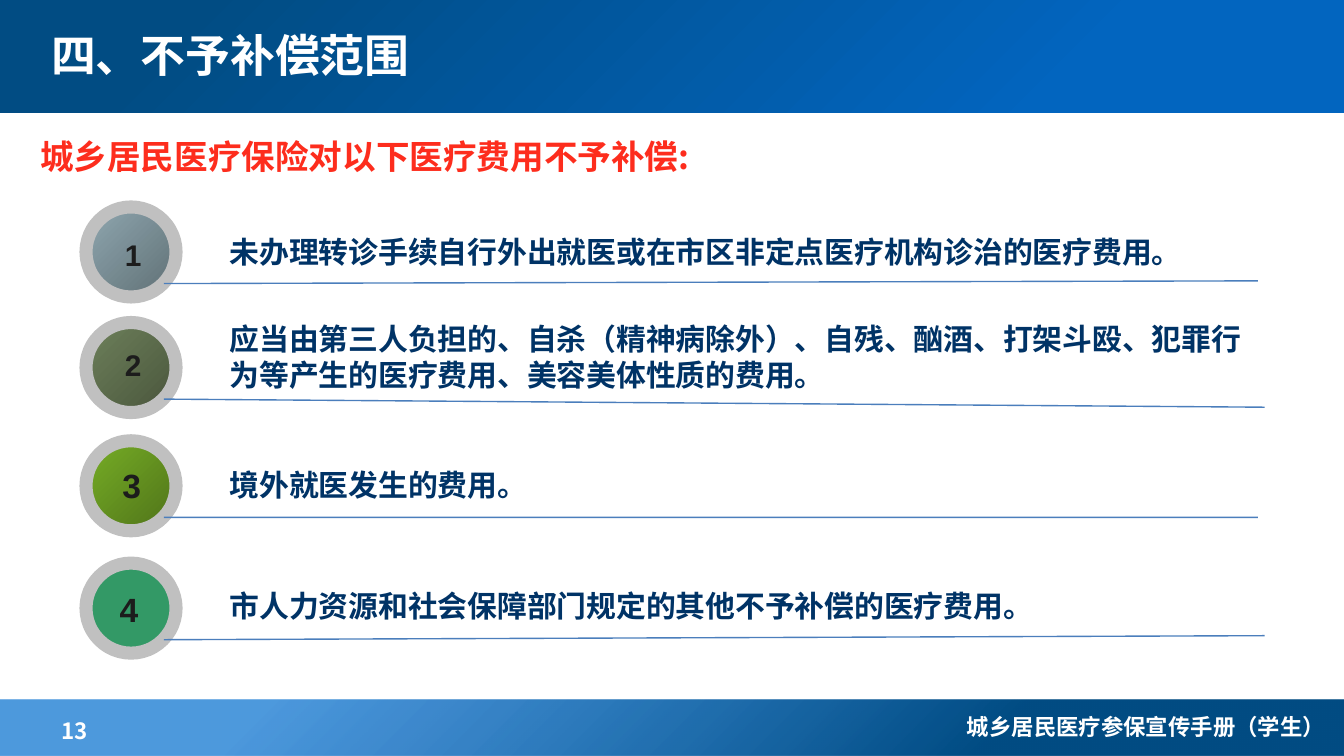
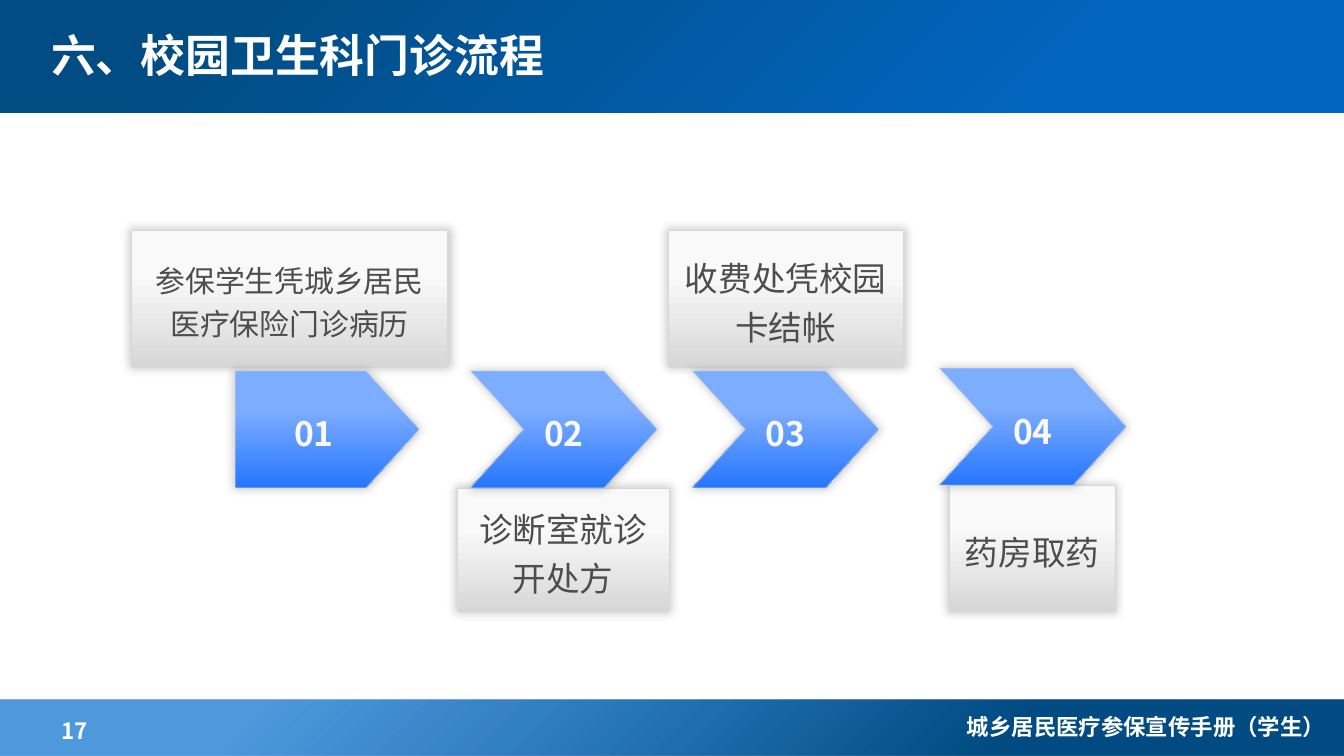
from lxml import etree
from pptx import Presentation
from pptx import util as u
from pptx.dml.color import RGBColor
from pptx.enum import shapes, text
from pptx.oxml.ns import qn

# Content
FOOTER = "城乡居民医疗参保宣传手册（学生）"
EXCLUSIONS_TITLE, EXCLUSIONS_PAGE = "四、不予补偿范围", "13"
LEAD = "城乡居民医疗保险对以下医疗费用不予补偿:"
# text, circle top, circle gradient, number centre (x, y), number size,
# text top, text width and height, rule end (x, y)
EXCLUSIONS = [
    ("未办理转诊手续自行外出就医或在市区非定点医疗机构诊治的医疗费用。",
     1.54, ("90A8B0", "5F6F75"), (0.99, 1.9), 16, 1.69, (7.75, 0.37), (9.36, 2.09)),
    ("应当由第三人负担的、自杀（精神病除外）、自残、酗酒、打架斗殴、犯罪行为等产生的医疗费用、美容美体性质的费用。",
     2.4, ("6E815B", "49553C"), (0.99, 2.72), 16, 2.34, (7.75, 0.64), (9.41, 3.03)),
    ("境外就医发生的费用。",
     3.28, ("77AE26", "4F7319"), (0.98, 3.6), 18, 3.42, (4.25, 0.37), (9.36, 3.85)),
    ("市人力资源和社会保障部门规定的其他不予补偿的医疗费用。",
     4.19, ("339966",), (0.96, 4.52), 18, 4.32, (7.75, 0.37), (9.41, 4.73)),
]
CLINIC_TITLE, CLINIC_PAGE = "六、校园卫生科门诊流程", "17"
# label, size, label box, arrow left, top and width
STEPS = [
    ("参保学生凭城乡居民医疗保险门诊病历", 16, (0.98, 1.71, 2.35, 1.02), (1.75, 2.76, 1.37)),
    ("诊断室就诊开处方", 18, (3.4, 3.63, 1.58, 0.92), (3.5, 2.76, 1.39)),
    ("收费处凭校园卡结帐", 18, (4.97, 1.71, 1.75, 1.02), (5.15, 2.76, 1.39)),
    ("药房取药", 18, (7.06, 3.61, 1.24, 0.94), (6.99, 2.74, 1.39)),
]

# Shared style
WIDTH = 10
HEIGHT = WIDTH * 9 / 16
SANS = "Noto Sans CJK SC"
WHITE, NAVY, RED, INK, GREY = "FFFFFF", "003366", "FD2D1D", "1C1C1C", "4D4D4D"
RING, RULE, EDGE = "C0C0C0", "4B7EBC", "D7D7D7"
CARD_STOPS = [(33, "F9F9F9"), (100, "D7D7D7")]
ARROW_STOPS = [(33, "7DADFF"), (100, "2676FF")]
TITLE_STOPS = [(21, "0265BF"), (86, "014C83")]
FOOTER_STOPS = [(26, "014C83"), (80, "026DCE", 70)]
CIRCLE, ARROW_HEIGHT, FOOTER_HEIGHT = 0.67, 0.87, 0.42
RULE_LEFT, RULE_DROP, TEXT_LEFT = 1.22, 0.57, 1.61
PRESET = shapes.MSO_SHAPE


def rgb(value):
    return RGBColor.from_string(value)


def inches(lengths):
    return [u.Inches(length) for length in lengths]


def add_xml(parent, tag, **attributes):
    child = etree.SubElement(parent, qn(tag))
    for name, value in attributes.items():
        child.set(name, str(value))
    return child


def write(shape, words, size, color, bold=True, font=SANS, align="LEFT",
          anchor="TOP", wrap=True, spacing=None):
    frame = shape.text_frame
    frame.word_wrap = wrap
    frame.auto_size = text.MSO_AUTO_SIZE.NONE
    frame.vertical_anchor = getattr(text.MSO_ANCHOR, anchor)
    para = frame.paragraphs[0]
    para.text = words
    para.alignment = getattr(text.PP_ALIGN, align)
    if spacing:
        para.line_spacing = spacing
    para.font.name, para.font.size, para.font.bold = font, u.Pt(size), bold
    para.font.color.rgb = rgb(color)
    defaults = para._p.pPr.find(qn("a:defRPr"))
    add_xml(defaults, "a:ea", typeface=SANS)


def add_text(page, area, words, size, color, **style):
    box = page.shapes.add_textbox(*inches(area))
    write(box, words, size, color, **style)
    return box


def fill_gradient(shape, stops, angle=None):
    """Linear at the angle, or circular from the lower right corner."""
    shape.fill.gradient()
    gradient = shape._element.spPr.find(qn("a:gradFill"))
    for child in list(gradient):
        gradient.remove(child)
    stop_list = add_xml(gradient, "a:gsLst")
    for position, color, *alpha in stops:
        stop = add_xml(stop_list, "a:gs", pos=position * 1000)
        tint = add_xml(stop, "a:srgbClr", val=color)
        if alpha:
            add_xml(tint, "a:alpha", val=alpha[0] * 1000)
    if angle is None:
        route = add_xml(gradient, "a:path", path="circle")
        add_xml(route, "a:fillToRect", l=100000, t=100000)
    else:
        add_xml(gradient, "a:lin", ang=angle * 60000, scaled=0)


def add_filled(page, preset, area, stops, angle=None, line=None, line_width=0):
    shape = page.shapes.add_shape(preset, *inches(area))
    shape.shadow.inherit = False
    if len(stops) == 1:
        shape.fill.solid()
        shape.fill.fore_color.rgb = rgb(stops[0][1])
    else:
        fill_gradient(shape, stops, angle)
    if line:
        shape.line.color.rgb = rgb(line)
        shape.line.width = u.Pt(line_width)
    else:
        shape.line.fill.background()
    return shape


def add_raised(page, preset, area, stops):
    """Flow part with a thin edge and a soft shadow all round."""
    shape = add_filled(page, preset, area, stops, 90, EDGE, 0.25)
    effects = shape._element.spPr.find(qn("a:effectLst"))
    shadow = add_xml(effects, "a:outerShdw", blurRad=u.Pt(5), dist=0, dir=0,
                     sx=102000, sy=102000, algn="ctr", rotWithShape=0)
    add_xml(add_xml(shadow, "a:srgbClr", val="000000"), "a:alpha", val=20000)
    return shape


def add_rule(page, start, end):
    rule = page.shapes.add_connector(shapes.MSO_CONNECTOR.STRAIGHT, *inches(start + end))
    rule.line.color.rgb = rgb(RULE)
    rule.line.width = u.Pt(0.75)
    add_xml(rule._element.spPr, "a:effectLst")


def furnish_layout(layout, page):
    """Build the bands and footer on a page, then move them to its layout."""
    footer_area = (0, HEIGHT - FOOTER_HEIGHT, WIDTH, FOOTER_HEIGHT)
    parts = [
        add_filled(page, PRESET.RECTANGLE, footer_area, FOOTER_STOPS),
        add_filled(page, PRESET.RECTANGLE, (0, -0.03, 10.03, 0.87), TITLE_STOPS),
        add_text(page, (6.89, 5.26, 3.07, 0.26), FOOTER, 12, WHITE, align="RIGHT"),
    ]
    tree = layout.shapes._spTree
    for index, part in enumerate(parts):
        part._element.nvSpPr.cNvPr.id = 100 + index
        tree.insert(2 + index, part._element)


def head_page(page, title, number):
    box = page.shapes.title
    box.left, box.top, box.width, box.height = inches((0.28, 0.05, 6.38, 0.71))
    write(box, title, 24, WHITE, font="Times New Roman", anchor="MIDDLE")
    add_text(page, (0.36, 5.29, 1.53, 0.26), number, 12, WHITE)


def build_exclusions(page):
    head_page(page, EXCLUSIONS_TITLE, EXCLUSIONS_PAGE)
    add_text(page, (0.2, 0.96, 5.14, 0.4), LEAD, 18, RED, anchor="MIDDLE", wrap=False)
    for number, row in enumerate(EXCLUSIONS, 1):
        words, top, colors, (x, y), size, text_top, text_size, rule_end = row
        stops = list(zip((0, 100), colors))
        add_filled(page, PRESET.FLOWCHART_CONNECTOR, (0.64, top, CIRCLE, CIRCLE),
                   stops, 45, RING, 7)
        add_text(page, (x - 0.24, y - 0.19, 0.48, 0.38), str(number), size, INK,
                 font="Arial", align="CENTER")
        add_text(page, (TEXT_LEFT, text_top) + text_size, words, 16, NAVY)
        add_rule(page, (RULE_LEFT, top + RULE_DROP), rule_end)


def build_clinic(page):
    head_page(page, CLINIC_TITLE, CLINIC_PAGE)
    centred = dict(align="CENTER", anchor="MIDDLE", spacing=1.2)
    # Label cards lie behind the arrows
    for words, size, area, _ in STEPS:
        card = add_raised(page, PRESET.RECTANGLE, area, CARD_STOPS)
        write(card, words, size, GREY, bold=False, **centred)
    for number, (_, _, _, place) in enumerate(STEPS, 1):
        preset = PRESET.PENTAGON if number == 1 else PRESET.CHEVRON
        arrow = add_raised(page, preset, place + (ARROW_HEIGHT,), ARROW_STOPS)
        arrow.adjustments[0] = 0.455
        write(arrow, f"{number:02}", 18, "F9F9F9", **centred)


def main():
    deck = Presentation()
    deck.slide_width, deck.slide_height = inches((WIDTH, HEIGHT))
    layout = deck.slide_layouts[5]
    pages = [deck.slides.add_slide(layout) for _ in range(2)]
    furnish_layout(layout, pages[0])
    build_exclusions(pages[0])
    build_clinic(pages[1])
    deck.save("out.pptx")


if __name__ == "__main__":
    main()
